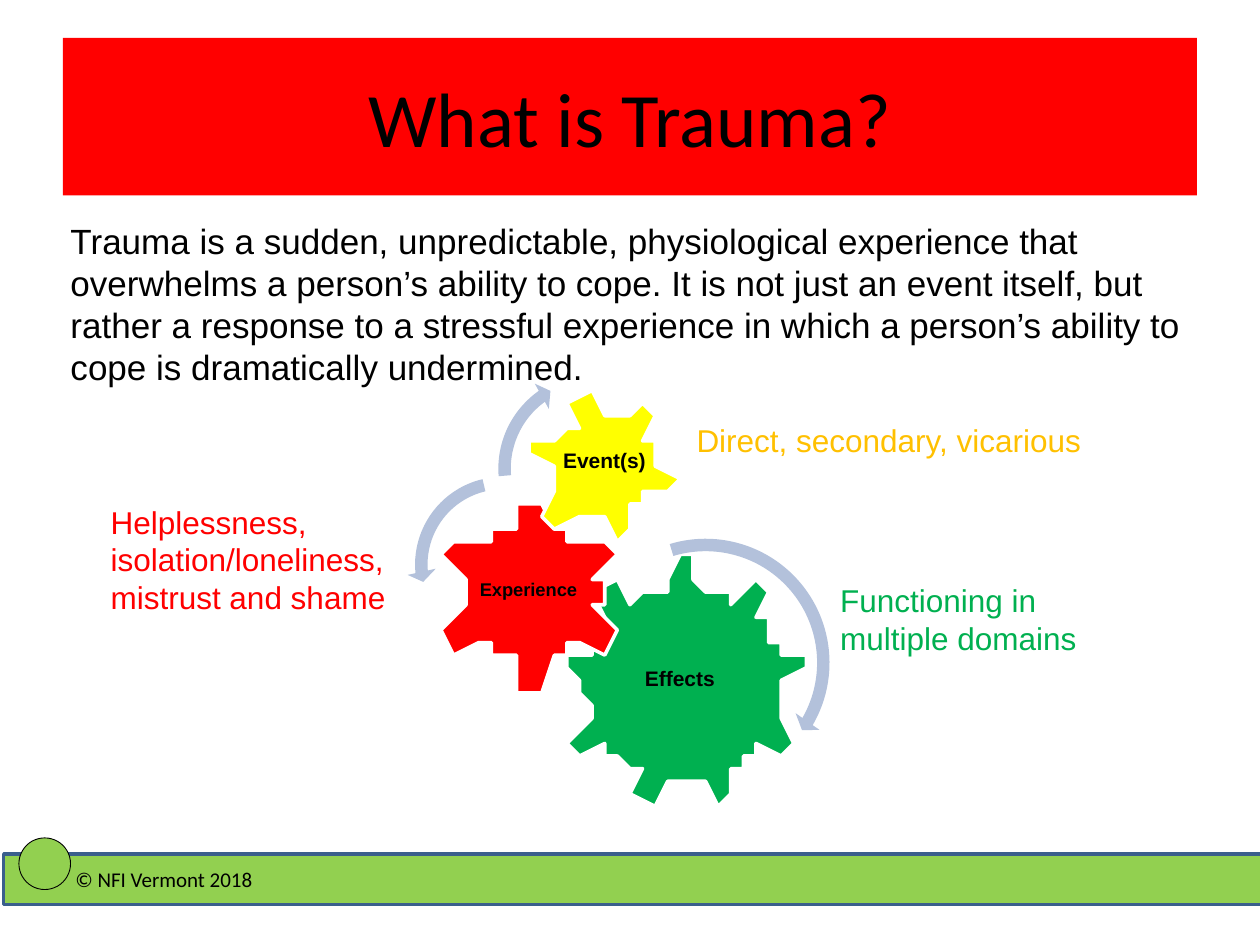
from dataclasses import dataclass
from math import asin, cos, hypot, pi, radians, sin

from pptx import Presentation
from pptx.dml.color import RGBColor
from pptx.enum.shapes import MSO_SHAPE
from pptx.enum.text import MSO_ANCHOR, PP_ALIGN
from pptx.util import Inches, Pt

SLIDE_W, SLIDE_H = 10, 7.5
CELL = Inches(SLIDE_W) / 100  # the grid has 100 columns and 75 rows


@dataclass(frozen=True)
class Theme:
    heading_font: str = "Calibri"
    body_font: str = "Arial"
    black: str = "000000"
    white: str = "FFFFFF"
    red: str = "FF0000"
    yellow: str = "FFFF00"
    green: str = "00B050"
    amber: str = "FFC000"
    lime: str = "92D050"
    navy: str = "3A5F8C"
    arrow: str = "B3C1DB"
    title_size: float = 44
    body_size: float = 20
    note_size: float = 18
    label_size: float = 12
    small_label_size: float = 10.5


THEME = Theme()


@dataclass(frozen=True)
class Box:
    """An area in grid columns and rows."""
    x: float
    y: float
    w: float
    h: float

    def inner(self, x, y, w, h):
        return Box(self.x + x, self.y + y, w, h)

    def emu(self):
        return [round(n * CELL) for n in (self.x, self.y, self.w, self.h)]


def paint(shape, fill, line=None, width=0):
    shape.shadow.inherit = False
    shape.fill.solid()
    shape.fill.fore_color.rgb = RGBColor.from_string(fill)
    if line:
        shape.line.color.rgb = RGBColor.from_string(line)
        shape.line.width = Pt(width)
    else:
        shape.line.fill.background()


def add_preset(slide, kind, box, fill, line=None, width=0):
    shape = slide.shapes.add_shape(kind, *box.emu())
    paint(shape, fill, line, width)
    return shape


def write(shape, words, size, color=THEME.black, font=THEME.body_font, bold=False,
          align=PP_ALIGN.LEFT, anchor=MSO_ANCHOR.TOP):
    frame = shape.text_frame
    frame.word_wrap = True
    frame.vertical_anchor = anchor
    paragraph = frame.paragraphs[0]
    paragraph.alignment = align
    run = paragraph.add_run()
    run.text = words
    run.font.name, run.font.size, run.font.bold = font, Pt(size), bold
    run.font.color.rgb = RGBColor.from_string(color)


def add_text(slide, box, words, size, **style):
    text = slide.shapes.add_textbox(*box.emu())
    write(text, words, size, **style)
    return text


def gear_outline(center, teeth, turn, tip, root):
    """Points of a gear; tip and root are (distance from centre, half width)."""
    cx, cy = center
    pitch = 2 * pi / teeth
    root_radius = hypot(*root)
    half_angle = asin(root[1] / root_radius)
    arc_steps = 6
    points = []
    for tooth in range(teeth):
        angle = radians(turn) + tooth * pitch
        for reach, side in ((root[0], -root[1]), (tip[0], -tip[1]), tip, root):
            points.append((cx + reach * sin(angle) + side * cos(angle),
                           cy - reach * cos(angle) + side * sin(angle)))
        for step in range(1, arc_steps):
            around = angle + half_angle + (pitch - 2 * half_angle) * step / arc_steps
            points.append((cx + root_radius * sin(around), cy - root_radius * cos(around)))
    return points


def add_gear(slide, box, x, y, teeth, turn, tip, root, color):
    start, *rest = gear_outline((box.x + x, box.y + y), teeth, turn, tip, root)
    builder = slide.shapes.build_freeform(*start, scale=CELL)
    builder.add_line_segments(rest, close=True)
    paint(builder.convert_to_shape(), color, THEME.white, 2)


def add_footer(slide, box):
    add_preset(slide, MSO_SHAPE.RECTANGLE, box.inner(0.3, 1.3, box.w, 4),
               THEME.lime, THEME.navy, 2)
    notice = add_preset(slide, MSO_SHAPE.RECTANGLE, box.inner(5, 1.8, 19.4, 3), THEME.lime)
    write(notice, "© NFI Vermont 2018", THEME.label_size, font=THEME.heading_font)
    add_preset(slide, MSO_SHAPE.OVAL, box.inner(1.5, 0, 4.1, 4.1),
               THEME.lime, THEME.black, 0.5)


def add_gear_diagram(slide, box):
    gears = (
        (46.5, 25.3, 9, 0, (9.8, 0.8), (7.8, 1.15), THEME.green),
        (34.4, 18.05, 6, 0, (7.55, 0.8), (5.25, 1.4), THEME.red),
        (40, 8, 6, -17.5, (5.8, 0.63), (3.95, 1.1), THEME.yellow),
    )
    for gear in gears:
        add_gear(slide, box, *gear)

    arrows = (
        (MSO_SHAPE.CIRCULAR_ARROW, 37.7, 13.1, 21, 348.3,
         (0.047, 2.99, 25.01, 158.94, 0.055)),
        (MSO_SHAPE.LEFT_CIRCULAR_ARROW, 24.5, 8.2, 15.2, 0,
         (0.065, 4.3, 104.89, 154, 0.075)),
        (MSO_SHAPE.CIRCULAR_ARROW, 31.1, 0, 16.4, 12.6,
         (0.06, 3.94, 133.14, 97.71, 0.07)),
    )
    for kind, x, y, side, rotation, bends in arrows:
        arrow = add_preset(slide, kind, box.inner(x, y, side, side), THEME.arrow)
        arrow.rotation = rotation
        for index, bend in enumerate(bends):
            arrow.adjustments[index] = bend

    gear_labels = (
        ("Event(s)", (35.9, 6, 10.1, 3), THEME.label_size),
        ("Experience", (29.3, 16.4, 10.4, 2.8), THEME.small_label_size),
        ("Effects", (42.4, 23.3, 11.3, 3), THEME.label_size),
    )
    for words, place, size in gear_labels:
        add_text(slide, box.inner(*place), words, size, bold=True)

    notes = (
        ("Direct, secondary, vicarious", (46.5, 3.9, 34.3, 4), THEME.amber),
        ("Helplessness, isolation/loneliness, mistrust and shame",
         (0, 10.4, 24.4, 10.1), THEME.red),
        ("Functioning in multiple domains", (57.9, 16.6, 22.2, 7.1), THEME.green),
    )
    for words, place, color in notes:
        add_text(slide, box.inner(*place), words, THEME.note_size, color=color)


def add_title(slide, box):
    banner = add_preset(slide, MSO_SHAPE.RECTANGLE, box, THEME.red)
    write(banner, "What is Trauma?", THEME.title_size, font=THEME.heading_font,
          align=PP_ALIGN.CENTER, anchor=MSO_ANCHOR.MIDDLE)


def add_definition(slide, box):
    definition = add_text(
        slide, box,
        "Trauma is a sudden, unpredictable, physiological experience that overwhelms "
        "a person’s ability to cope. It is not just an event itself, but rather a "
        "response to a stressful experience in which a person’s ability to cope is "
        "dramatically undermined.", THEME.body_size)
    frame = definition.text_frame
    frame.margin_left = frame.margin_top = frame.margin_right = frame.margin_bottom = 0


def main():
    deck = Presentation()
    deck.slide_width, deck.slide_height = Inches(SLIDE_W), Inches(SLIDE_H)
    slide = deck.slides.add_slide(deck.slide_layouts[6])
    add_footer(slide, Box(0, 66.5, 100, 5.3))
    add_gear_diagram(slide, Box(7.8, 29, 81, 36))
    add_title(slide, Box(5, 3, 90, 12.5))
    add_definition(slide, Box(5.6, 17.4, 89.4, 12))
    deck.save("out.pptx")


if __name__ == "__main__":
    main()
